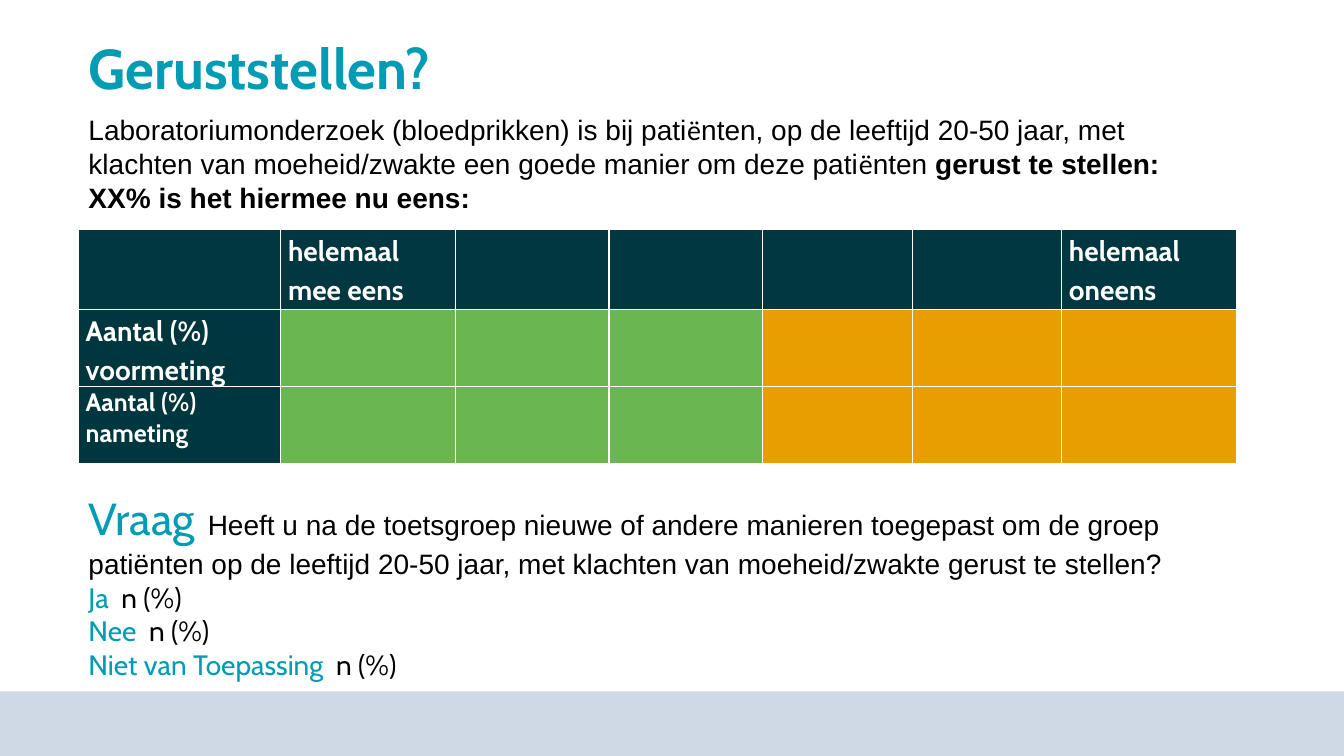
from pptx import Presentation
from pptx.dml.color import RGBColor
from pptx.enum.shapes import MSO_SHAPE
from pptx.util import Cm, Pt

RECT = MSO_SHAPE.RECTANGLE
TEAL, BLACK, WHITE = "009CB4", "000000", "FFFFFF"
HEADER, LABEL, GREEN, ORANGE, FOOTER = "003741", "00373E", "6AB650", "E89E00", "CED9E5"
LEFT = 1.98


def rgb(value):
    return RGBColor.from_string(value)


def style(font, size, name, color, bold=False):
    font.size = Pt(size)
    font.name = name
    font.color.rgb = rgb(color)
    font.bold = bold


def add_text(s, x, y, w, h):
    tf = s.shapes.add_textbox(Cm(x), Cm(y), Cm(w), Cm(h)).text_frame
    tf.word_wrap = True
    return tf


def add_run(p, text):
    r = p.add_run()
    r.text = text
    return r


def add_footer(s, x, y, w, h):
    sp = s.shapes.add_shape(RECT, Cm(x), Cm(y), Cm(w), Cm(h))
    sp.shadow.inherit = False
    sp.fill.solid()
    sp.fill.fore_color.rgb = rgb(FOOTER)
    sp.line.fill.background()


def add_title(s, x, y, w, h):
    p = add_text(s, x, y, w, h).paragraphs[0]
    p.text = "Geruststellen?"
    p.line_spacing = 0.9
    style(p.font, 40, "Cabin", TEAL, True)


def add_statement(s, x, y, w, h):
    tf = add_text(s, x, y, w, h)
    p = tf.paragraphs[0]
    style(p.font, 20, "Arial", BLACK)
    parts = [
        "Laboratoriumonderzoek (bloedprikken) is bij pati", "ë",
        "nten, op de leeftijd 20-50 jaar, met klachten van moeheid/zwakte "
        "een goede manier om deze pati", "ë", "nten ",
    ]
    for text in parts:
        style(add_run(p, text).font, 20, "Calibri" if text == "ë" else "Arial", BLACK)
    style(add_run(p, "gerust te stellen:").font, 20, "Arial", BLACK, True)
    p = tf.add_paragraph()
    p.text = "XX% is het hiermee nu eens:"
    style(p.font, 20, "Arial", BLACK, True)


def add_scores(s, x, y, w, h):
    widths = [5.1, 4.4, 3.87, 3.87, 3.77, 3.77, 4.4]
    heights = [2.03, 1.95, 1.93]
    texts = {
        (0, 1): "helemaal mee eens",
        (0, 6): "helemaal oneens",
        (1, 0): "Aantal (%) voormeting",
        (2, 0): "Aantal (%) nameting",
    }
    table = s.shapes.add_table(len(heights), len(widths), Cm(x), Cm(y), Cm(w), Cm(h)).table
    table.horz_banding = False
    for column, width in zip(table.columns, widths):
        column.width = Cm(width)
    for i, height in enumerate(heights):
        table.rows[i].height = Cm(height)
        for j in range(len(widths)):
            cell = table.cell(i, j)
            cell.margin_left = cell.margin_right = Cm(0.18)
            cell.margin_top = cell.margin_bottom = Cm(0)
            cell.fill.solid()
            body = LABEL if j == 0 else GREEN if j <= 3 else ORANGE
            cell.fill.fore_color.rgb = rgb(HEADER if i == 0 else body)
            if (i, j) in texts:
                p = cell.text_frame.paragraphs[0]
                p.text = texts[i, j]
                p.line_spacing = 1.0 if i == 2 else 1.15
                style(p.font, 18 if i == 2 else 20, "Cabin", WHITE, True)


def add_question(s, x, y, w, h):
    tf = add_text(s, x, y, w, h)
    p = tf.paragraphs[0]
    style(add_run(p, "Vraag").font, 32, "Cabin", TEAL)
    style(add_run(p, " ").font, 40, "Cabin", TEAL)
    question = ("Heeft u na de toetsgroep nieuwe of andere manieren toegepast om de groep "
                "patiënten op de leeftijd 20-50 jaar, met klachten van moeheid/zwakte "
                "gerust te stellen?")
    style(add_run(p, question).font, 20, "Arial", BLACK)
    for answer in ("Ja", "Nee", "Niet van Toepassing"):
        p = tf.add_paragraph()
        style(add_run(p, answer + " ").font, 20, "Cabin", TEAL)
        style(add_run(p, " n (%)").font, 20, "Cabin", BLACK)


def main():
    prs = Presentation()
    prs.slide_width, prs.slide_height = Cm(33.87), Cm(19.05)
    s = prs.slides.add_slide(prs.slide_layouts[6])
    add_footer(s, 0, 17.42, 33.87, 1.63)
    add_title(s, LEFT, 0.91, 27.13, 1.8)
    add_scores(s, LEFT, 5.77, 29.18, 5.91)
    add_statement(s, LEFT, 2.72, 27.81, 2.8)
    add_question(s, LEFT, 11.96, 29.1, 5.38)
    prs.save("out.pptx")


if __name__ == "__main__":
    main()
